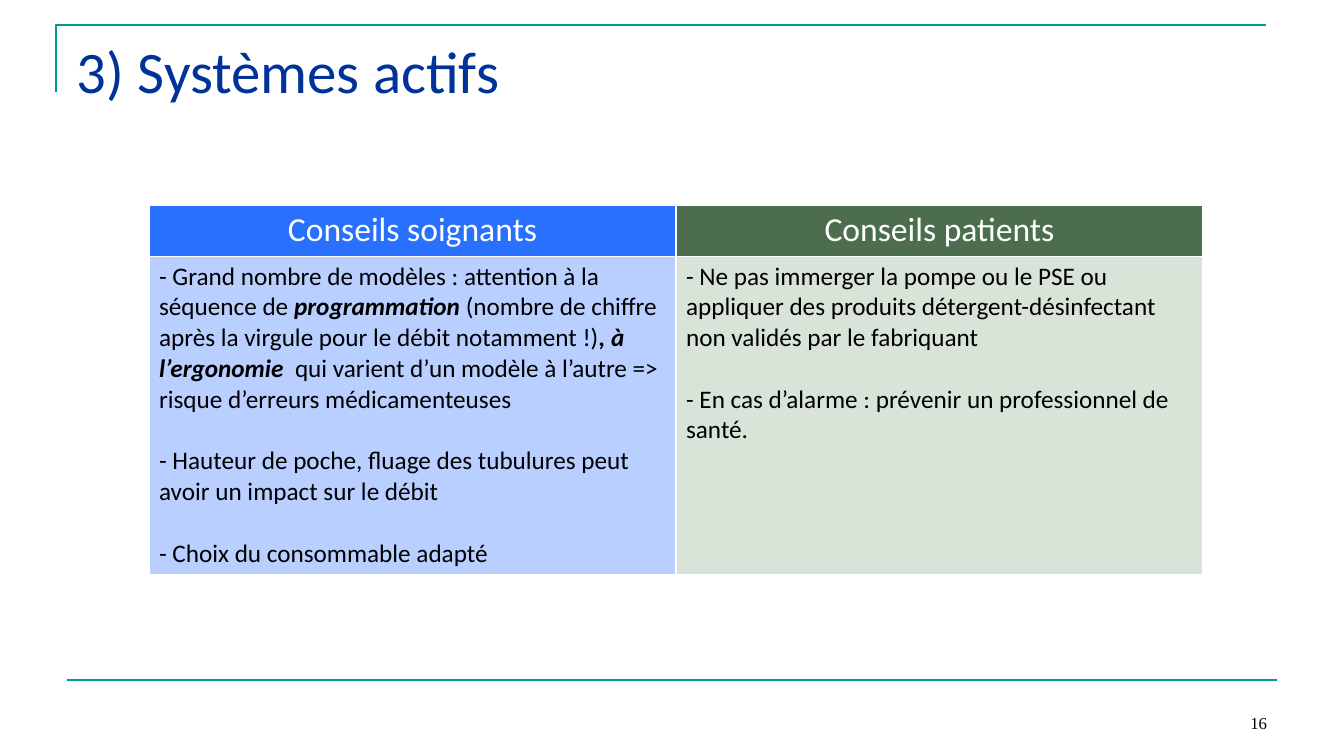
from lxml import etree
from pptx import Presentation
from pptx import util as u
from pptx.dml.color import RGBColor
from pptx.enum import shapes, text
from pptx.oxml.ns import qn

SCALE = 914400 / 100.8  # EMU per px
COLORS = {
    "rule": "009999", "title": "003399", "black": "000000", "white": "FFFFFF",
    "blue": "2970FF", "green": "4C6D4E", "pale_blue": "B8CFFF", "pale_green": "D9E4D9",
}
EMPHASIS = {"bold": True, "italic": True}

# Each column: heading, heading fill, body fill, paragraphs made of (text, format) runs
COLUMNS = [
    ("Conseils soignants", "blue", "pale_blue", [
        [("- Grand nombre de modèles : attention à la séquence de ", {}),
         ("programmation ", EMPHASIS),
         ("(nombre de chiffre après la virgule pour le débit notamment !)", {}),
         (", à l’ergonomie ", EMPHASIS),
         (" qui varient d’un modèle à l’autre => risque d’erreurs médicamenteuses", {})],
        [("- Hauteur de poche, fluage des tubulures peut avoir un impact sur le débit", {})],
        [("- Choix du consommable adapté", {})],
    ]),
    ("Conseils patients", "green", "pale_green", [
        [("- Ne pas immerger la pompe ou le PSE ou appliquer des produits "
          "détergent-désinfectant non validés par le fabriquant", {})],
        [("- En cas d’alarme : prévenir un professionnel de santé.", {})],
    ]),
]


def px(n):
    return u.Emu(round(n * SCALE))


def rgb(name):
    return RGBColor.from_string(COLORS[name])


def add_run(p, content, size=18, color="black", font="Calibri", bold=False, italic=False):
    r = p.add_run()
    r.text = content
    f = r.font
    f.size, f.name, f.bold, f.italic = u.Pt(size), font, bold, italic
    f.color.rgb = rgb(color)


def add_text(s, box, content, align="LEFT", anchor="TOP", **fmt):
    tf = s.shapes.add_textbox(*map(px, box)).text_frame
    tf.word_wrap = True
    tf.vertical_anchor = text.MSO_ANCHOR[anchor]
    p = tf.paragraphs[0]
    p.alignment = text.PP_ALIGN[align]
    add_run(p, content, **fmt)


def style_rule(sp):
    sp.line.color.rgb = rgb("rule")
    sp.line.width = u.Pt(1.5)


def add_corner(s, points):
    fb = s.shapes.build_freeform(*map(px, points[0]))
    fb.add_line_segments([tuple(map(px, pt)) for pt in points[1:]], close=False)
    sp = fb.convert_to_shape()
    sp.shadow.inherit = False
    sp.fill.background()
    style_rule(sp)


def add_rule(s, x1, x2, y):
    cx = s.shapes.add_connector(shapes.MSO_CONNECTOR.STRAIGHT, px(x1), px(y), px(x2), px(y))
    etree.SubElement(cx._element.spPr, qn("a:effectLst"))
    style_rule(cx)


def style_cell(cell, fill):
    tcPr = cell._tc.get_or_add_tcPr()
    for side in ("lnL", "lnR", "lnT", "lnB"):
        ln = etree.SubElement(tcPr, qn("a:" + side), w=str(u.Pt(1)))
        solid = etree.SubElement(ln, qn("a:solidFill"))
        etree.SubElement(solid, qn("a:srgbClr"), val=COLORS["white"])
    cell.fill.solid()
    cell.fill.fore_color.rgb = rgb(fill)


def add_advice_table(s, x, y, col_width, row_heights):
    n = len(COLUMNS)
    table = s.shapes.add_table(2, n, px(x), px(y), px(col_width * n), px(sum(row_heights))).table
    table.first_row = table.horz_banding = False
    for row, height in zip(table.rows, row_heights):
        row.height = px(height)
    for i, (heading, head_fill, body_fill, paragraphs) in enumerate(COLUMNS):
        table.columns[i].width = px(col_width)
        head, body = table.cell(0, i), table.cell(1, i)
        style_cell(head, head_fill)
        style_cell(body, body_fill)
        p = head.text_frame.paragraphs[0]
        p.alignment = text.PP_ALIGN.CENTER
        add_run(p, heading, size=24, color="white")
        tf = body.text_frame
        for k, runs in enumerate(paragraphs):
            p = tf.add_paragraph() if k else tf.paragraphs[0]
            p.space_before = u.Pt(22 if k else 0)
            for content, fmt in runs:
                add_run(p, content, **fmt)


def main():
    prs = Presentation()
    prs.slide_width, prs.slide_height = px(1344), px(756)
    s = prs.slides.add_slide(prs.slide_layouts[6])

    # Frame lines
    add_corner(s, [(56, 92), (56, 25), (1266, 25)])
    add_rule(s, 67, 1277, 680)

    # Advice table
    add_advice_table(s, 149, 205, 527, (50, 318))

    # Page number and title
    add_text(s, (964, 688, 313, 50), "16", align="RIGHT", anchor="BOTTOM",
             size=12, font="Times New Roman")
    add_text(s, (67, 30, 1210, 100), "3) Systèmes actifs", size=42, color="title")

    prs.save("out.pptx")


if __name__ == "__main__":
    main()
